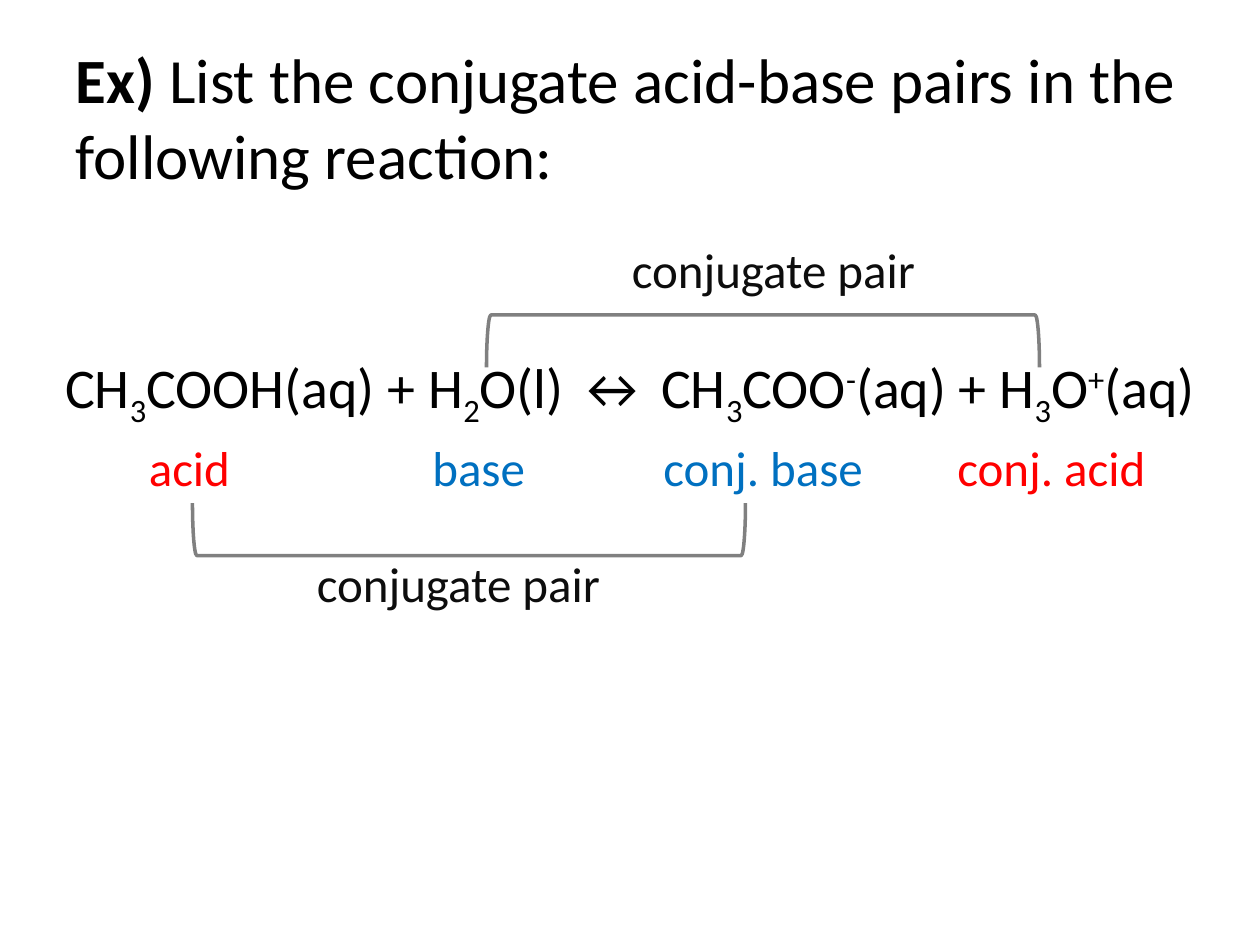
from dataclasses import dataclass

from pptx import Presentation
from pptx.dml.color import RGBColor
from pptx.enum.shapes import MSO_SHAPE
from pptx.enum.text import MSO_ANCHOR, MSO_AUTO_SIZE, PP_ALIGN
from pptx.util import Pt


@dataclass(frozen=True)
class Theme:
    font: str = "Calibri"
    title: int = 36
    equation: int = 32
    label: int = 28
    black: str = "000000"
    ink: str = "0D0D0D"
    acid: str = "FF0000"
    base: str = "0070C0"
    bracket: str = "808080"


SUB, SUP = -25, 30  # baseline shifts in percent


def add_run(p, text, *, font, size, color, bold=False, shift=0):
    r = p.add_run()
    r.text = text
    r.font.name, r.font.size, r.font.bold = font, Pt(size), bold
    r.font.color.rgb = RGBColor.from_string(color)
    if shift:
        r._r.get_or_add_rPr().set("baseline", str(shift * 1000))


class SlideBuilder:
    def __init__(self, slide, theme):
        self.slide, self.theme = slide, theme

    def placeholder(self, sp, box, size, runs, anchor):
        sp.left, sp.top, sp.width, sp.height = map(Pt, box)
        tf = sp.text_frame
        tf.vertical_anchor = anchor
        p = tf.paragraphs[0]
        p.alignment = PP_ALIGN.LEFT
        for text, fmt in runs:
            add_run(p, text, font=self.theme.font, size=size,
                    color=self.theme.black, **fmt)
        return p

    def title(self, box, runs):
        self.placeholder(self.slide.shapes.title, box, self.theme.title,
                         runs, MSO_ANCHOR.MIDDLE)

    def equation(self, box, runs):
        p = self.placeholder(self.slide.placeholders[1], box,
                             self.theme.equation, runs, MSO_ANCHOR.TOP)
        # No bullet and no hanging indent
        pPr = p._p.get_or_add_pPr()
        pPr.set("marL", "0")
        pPr.set("indent", "0")
        pPr.insert_element_before(
            pPr.makeelement(
                "{http://schemas.openxmlformats.org/drawingml/2006/main}buNone", {}),
            "a:tabLst", "a:defRPr", "a:extLst")

    def label(self, text, left, top, width, color):
        sp = self.slide.shapes.add_textbox(Pt(left), Pt(top), Pt(width), Pt(41))
        tf = sp.text_frame
        tf.word_wrap = True
        tf.auto_size = MSO_AUTO_SIZE.SHAPE_TO_FIT_TEXT
        add_run(tf.paragraphs[0], text, font=self.theme.font,
                size=self.theme.label, color=color)

    def bracket(self, center_x, center_y, rotation, depth=30, span=316):
        sp = self.slide.shapes.add_shape(
            MSO_SHAPE.LEFT_BRACKET, Pt(center_x - depth / 2),
            Pt(center_y - span / 2), Pt(depth), Pt(span))
        sp.rotation = rotation
        sp.shadow.inherit = False
        sp.fill.background()
        sp.line.color.rgb = RGBColor.from_string(self.theme.bracket)
        sp.line.width = Pt(2)


def main():
    prs = Presentation()
    prs.slide_width, prs.slide_height = Pt(720), Pt(540)
    theme = Theme()
    s = SlideBuilder(prs.slides.add_slide(prs.slide_layouts[1]), theme)

    # Question
    s.title((36, 21.6, 648, 90), [
        ("Ex)", {"bold": True}),
        (" List the conjugate acid-base pairs in the following reaction:", {}),
    ])

    # Reaction
    sub, sup = {"shift": SUB}, {"shift": SUP}
    s.equation((30, 198, 666, 290), [
        ("CH", {}), ("3", sub), ("COOH(aq) + H", {}), ("2", sub),
        ("O(l) ↔ CH", {}), ("3", sub), ("COO", {}), ("-", sup),
        ("(aq) + H", {}), ("3", sub), ("O", {}), ("+", sup), ("(aq)", {}),
    ])

    # Role of each species
    for text, left, width, color in [
        ("acid", 78, 78, theme.acid),
        ("base", 240, 78, theme.base),
        ("conj. base", 372, 174, theme.base),
        ("conj. acid", 540, 180, theme.acid),
    ]:
        s.label(text, left, 246.5, width, color)

    # Brackets that join each pair, with their captions
    for center_x, center_y, rotation, left, top in [
        (268, 302.5, 270, 174, 312.5),
        (436, 195, 90, 354, 133.5),
    ]:
        s.bracket(center_x, center_y, rotation)
        s.label("conjugate pair", left, top, 216, theme.ink)

    prs.save("out.pptx")


if __name__ == "__main__":
    main()
